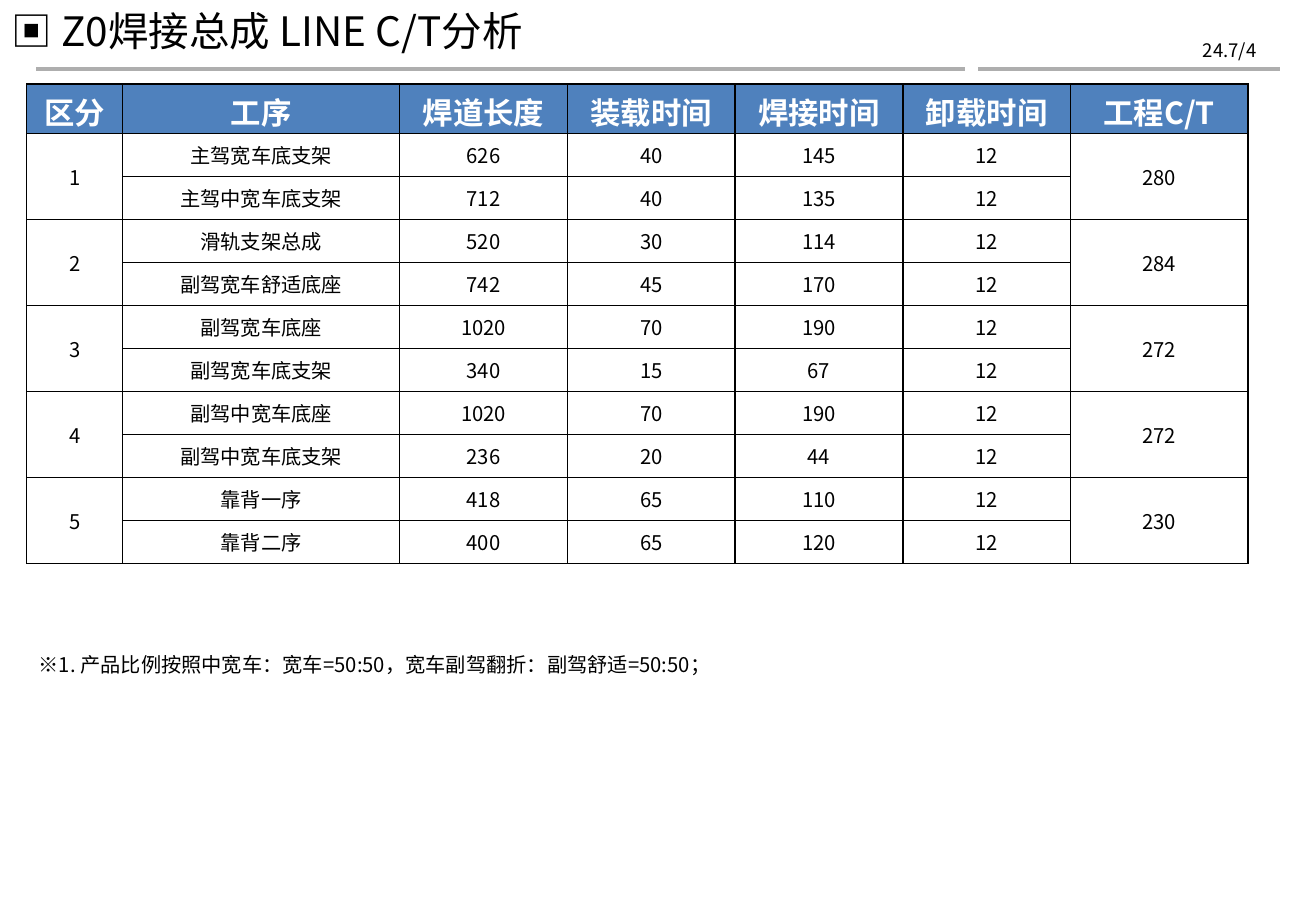
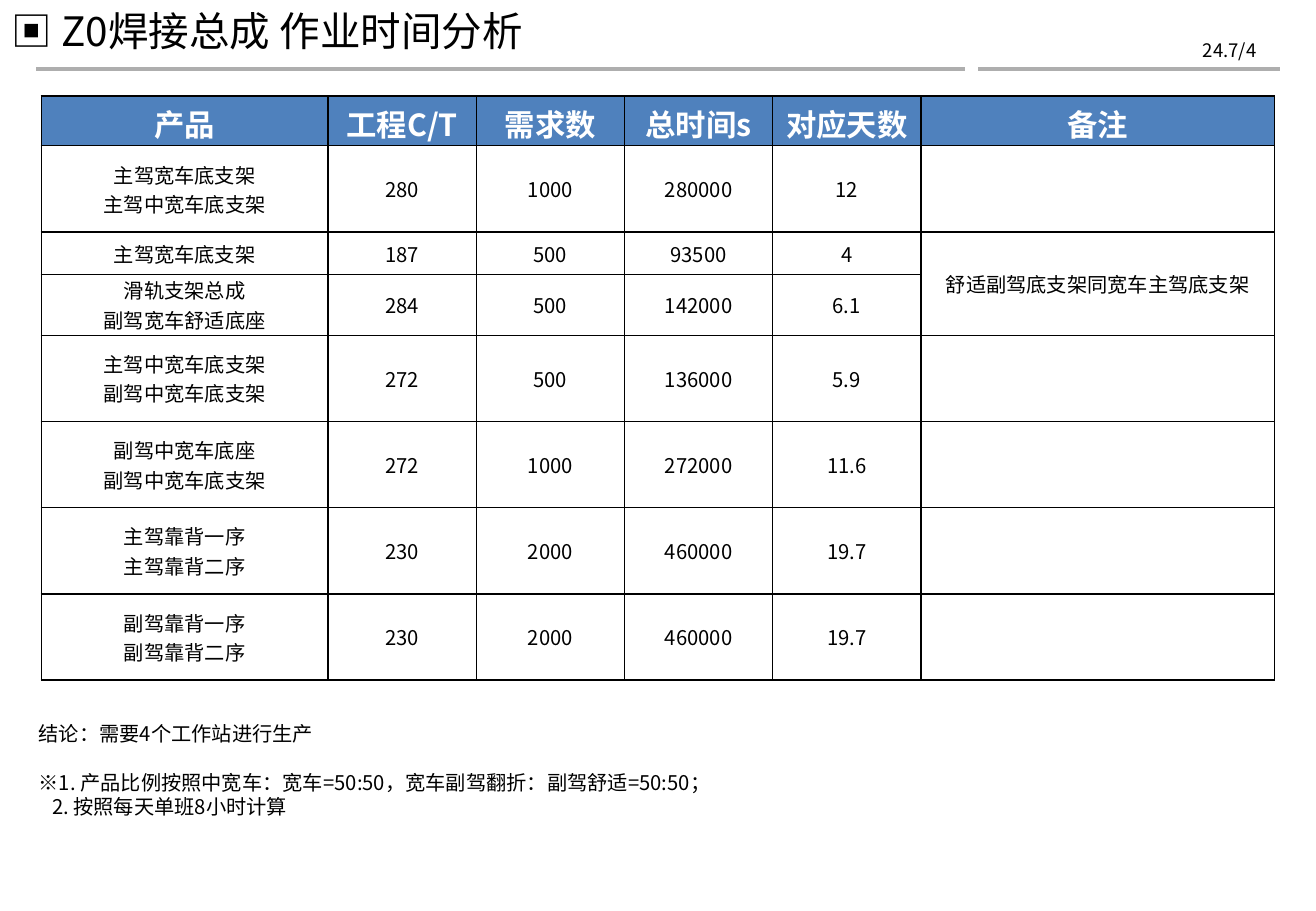
from lxml import etree
from pptx import Presentation
from pptx.dml.color import RGBColor
from pptx.enum import shapes, text
from pptx.oxml.ns import qn
from pptx.util import Inches, Pt

SANS, DATE_FONT = "Noto Sans CJK SC", "Noto Sans CJK KR"
BLACK, WHITE, BLUE, GREY = "000000", "FFFFFF", "4F81BD", "AEAEAE"
MID, LEFT, RIGHT = text.PP_ALIGN.CENTER, text.PP_ALIGN.LEFT, text.PP_ALIGN.RIGHT
RULES = [(0.3, 7.94), (8.05, 10.53)]
DATE = "24.7/4"
RATIO = "※1. 产品比例按照中宽车：宽车=50:50，宽车副驾翻折：副驾舒适=50:50；"

# None continues the merged cell above it.
LINE_ROWS = [
    ("区分", "工序", "焊道长度", "装载时间", "焊接时间", "卸载时间", "工程C/T"),
    ("1", "主驾宽车底支架", "626", "40", "145", "12", "280"),
    (None, "主驾中宽车底支架", "712", "40", "135", "12", None),
    ("2", "滑轨支架总成", "520", "30", "114", "12", "284"),
    (None, "副驾宽车舒适底座", "742", "45", "170", "12", None),
    ("3", "副驾宽车底座", "1020", "70", "190", "12", "272"),
    (None, "副驾宽车底支架", "340", "15", "67", "12", None),
    ("4", "副驾中宽车底座", "1020", "70", "190", "12", "272"),
    (None, "副驾中宽车底支架", "236", "20", "44", "12", None),
    ("5", "靠背一序", "418", "65", "110", "12", "230"),
    (None, "靠背二序", "400", "65", "120", "12", None),
]
TIME_ROWS = [
    ("产品", "工程C/T", "需求数", "总时间s", "对应天数", "备注"),
    ("主驾宽车底支架\n主驾中宽车底支架", "280", "1000", "280000", "12", ""),
    ("主驾宽车底支架", "187", "500", "93500", "4", "舒适副驾底支架同宽车主驾底支架"),
    ("滑轨支架总成\n副驾宽车舒适底座", "284", "500", "142000", "6.1", None),
    ("主驾中宽车底支架\n副驾中宽车底支架", "272", "500", "136000", "5.9", ""),
    ("副驾中宽车底座\n副驾中宽车底支架", "272", "1000", "272000", "11.6", ""),
    ("主驾靠背一序\n主驾靠背二序", "230", "2000", "460000", "19.7", ""),
    ("副驾靠背一序\n副驾靠背二序", "230", "2000", "460000", "19.7", ""),
]
SLIDES = [
    dict(title="▣ Z0焊接总成 LINE C/T分析", rows=LINE_ROWS, at=(0.22, 0.69),
         cols=[0.79, 2.28] + [1.38] * 4 + [1.46],
         highs=[0.41] + [(3.95 - 0.41) / 10] * 10,
         notes=[(RATIO, 0, 0)], top=5.32, high=0.3),
    dict(title="▣ Z0焊接总成 作业时间分析", rows=TIME_ROWS, at=(0.34, 0.79),
         cols=[2.36] + [1.22] * 4 + [2.91],
         highs=[0.41, 0.71, 0.35, 0.5] + [0.71] * 4,
         notes=[("结论：需要4个工作站进行生产", 0, 0), (RATIO, 14.5, 0),
                ("2. 按照每天单班8小时计算", 0, 0.11)],
         top=5.89, high=1.11),
]


def rgb(color):
    return RGBColor.from_string(color)


def write(par, words, size=12, color=BLACK, bold=False, font=SANS,
          align=LEFT, before=0, indent=0):
    par.alignment = align
    if before:
        par.space_before = Pt(before)
    if indent:
        par._p.get_or_add_pPr().set("marL", str(Inches(indent)))
    run = par.add_run()
    run.text = words
    run.font.size, run.font.bold, run.font.name = Pt(size), bold, font
    run.font.color.rgb = rgb(color)
    etree.SubElement(run._r.rPr, qn("a:ea"), typeface=font)


def add_text(slide, at, lines, **form):
    """Add a text box; each line is (words, points before, indent)."""
    frame = slide.shapes.add_textbox(*map(Inches, at)).text_frame
    frame.word_wrap = True
    for i, (words, before, indent) in enumerate(lines):
        par = frame.add_paragraph() if i else frame.paragraphs[0]
        write(par, words, before=before, indent=indent, **form)


def add_frame(slide, title):
    """Add the rules, date and title that every slide carries."""
    for start, end in RULES:
        rule = slide.shapes.add_connector(
            shapes.MSO_CONNECTOR.STRAIGHT, *map(Inches, (start, 0.57, end, 0.57)))
        rule.line.color.rgb = rgb(GREY)
        rule.line.width = Pt(2)
        etree.SubElement(rule._element.spPr, qn("a:effectLst"))
    add_text(slide, (9.35, 0.27, 1.09, 0.29), [(DATE, 0, 0)],
             size=11, font=DATE_FONT, align=RIGHT)
    add_text(slide, (0, 0, 9.12, 0.5), [(title, 0, 0)], size=24)


def set_border(cell):
    props = cell._tc.get_or_add_tcPr()
    for i, side in enumerate(("lnL", "lnR", "lnT", "lnB")):
        line = etree.Element(qn("a:" + side), w=str(Pt(1)))
        fill = etree.SubElement(line, qn("a:solidFill"))
        etree.SubElement(fill, qn("a:srgbClr"), val=BLACK)
        props.insert(i, line)


def add_grid(slide, rows, at, cols, highs):
    box = map(Inches, (*at, sum(cols), sum(highs)))
    grid = slide.shapes.add_table(len(rows), len(cols), *box).table
    grid.first_row = grid.horz_banding = False
    for col, wide in zip(grid.columns, cols):
        col.width = Inches(wide)
    for row, high in zip(grid.rows, highs):
        row.height = Inches(high)
    for r, row in enumerate(rows):
        head = r == 0
        form = dict(size=18, color=WHITE, bold=True) if head else {}
        for c, words in enumerate(row):
            cell = grid.cell(r, c)
            cell.fill.solid()
            cell.fill.fore_color.rgb = rgb(BLUE if head else WHITE)
            cell.vertical_anchor = text.MSO_ANCHOR.MIDDLE
            cell.margin_left = cell.margin_right = Inches(0.01)
            cell.margin_top = Inches(0.04 if head else 0)
            cell.margin_bottom = 0
            set_border(cell)
            if words is None:
                grid.cell(r - 1, c).merge(cell)
            elif words:
                for i, line in enumerate(words.split("\n")):
                    frame = cell.text_frame
                    par = frame.add_paragraph() if i else frame.paragraphs[0]
                    write(par, line, align=MID, **form)


def main():
    deck = Presentation()
    deck.slide_width, deck.slide_height = Inches(10.83), Inches(7.5)
    for page in SLIDES:
        slide = deck.slides.add_slide(deck.slide_layouts[6])
        add_frame(slide, page["title"])
        add_grid(slide, page["rows"], page["at"], page["cols"], page["highs"])
        add_text(slide, (0.22, page["top"], 9.69, page["high"]), page["notes"])
    deck.save("out.pptx")


if __name__ == "__main__":
    main()
